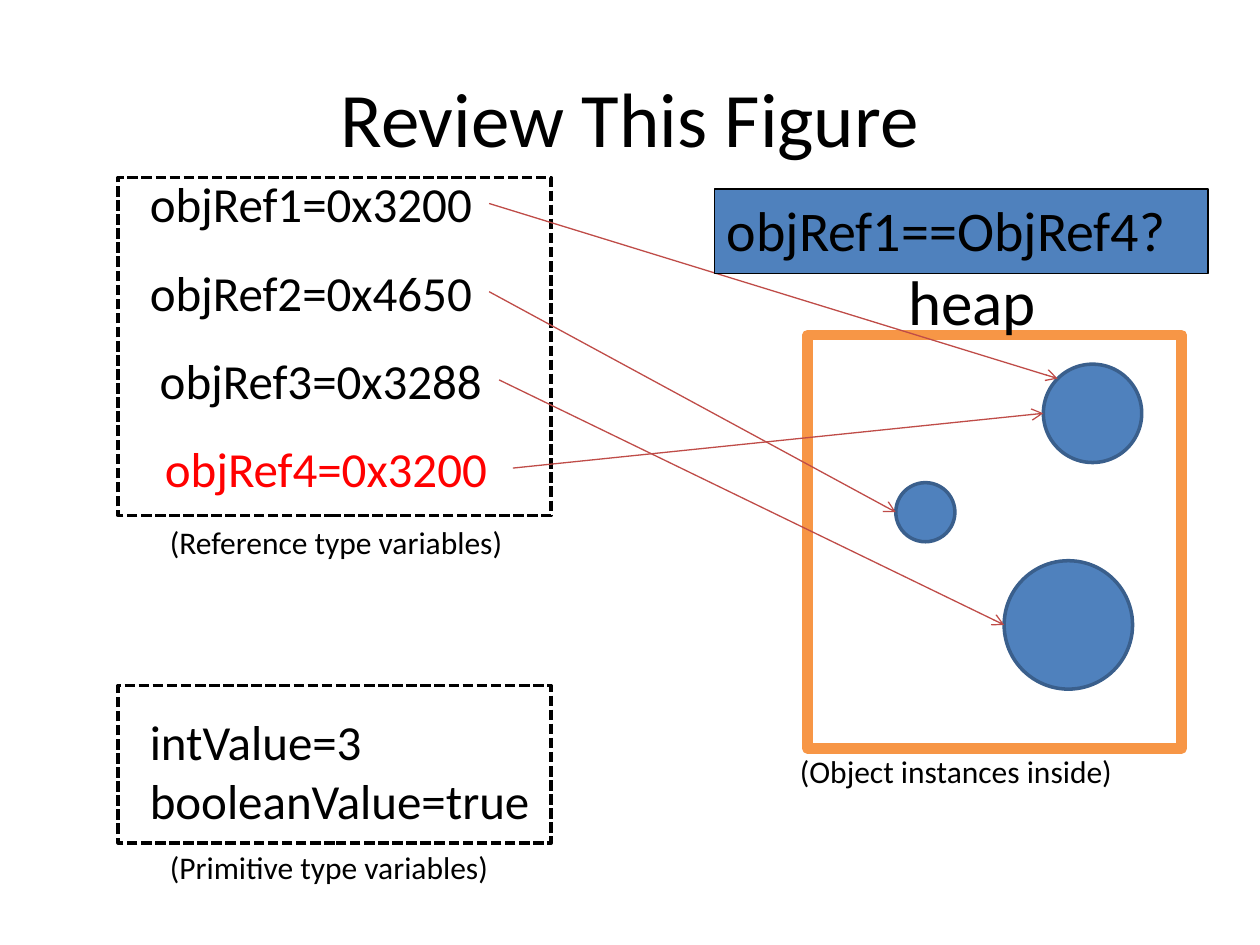
from math import sqrt
from pptx import Presentation
from pptx.dml.color import RGBColor
from pptx.enum.dml import MSO_LINE
from pptx.enum.shapes import MSO_CONNECTOR, MSO_SHAPE
from pptx.enum.text import MSO_ANCHOR, MSO_AUTO_SIZE, PP_ALIGN
from pptx.oxml.ns import qn
from pptx.util import Pt
from lxml.etree import SubElement

HUES = {
    "black": "000000", "white": "FFFFFF", "red": "FF0000", "blue": "4F81BD",
    "navy": "3A5F8C", "orange": "F79646", "brick": "BF4C48",
}


def hue(name):
    return RGBColor.from_string(HUES[name])


def add_run(frame, text, size, color="black"):
    run = frame.paragraphs[0].add_run()
    run.text = text
    run.font.name = "Calibri"
    run.font.size = Pt(size)
    run.font.color.rgb = hue(color)


def add_text(slide, text, x, y, w, h, size, color="black", wrap=False):
    box = slide.shapes.add_textbox(Pt(x), Pt(y), Pt(w), Pt(h))
    box.text_frame.word_wrap = wrap
    box.text_frame.auto_size = MSO_AUTO_SIZE.SHAPE_TO_FIT_TEXT
    add_run(box.text_frame, text, size, color)
    return box


def add_form(slide, kind, x, y, w, h, fill, edge, width):
    form = slide.shapes.add_shape(kind, Pt(x), Pt(y), Pt(w), Pt(h))
    form.shadow.inherit = False
    if fill:
        form.fill.solid()
        form.fill.fore_color.rgb = hue(fill)
    else:
        form.fill.background()
    form.line.color.rgb = hue(edge)
    form.line.width = Pt(width)
    return form


def add_frame(slide, y, h):
    frame = add_form(slide, MSO_SHAPE.RECTANGLE, 67.5, y, 247.5, h,
                     None, "black", 2)
    frame.line.dash_style = MSO_LINE.SQUARE_DOT


def add_arrow(slide, label, x, y):
    link = slide.shapes.add_connector(MSO_CONNECTOR.STRAIGHT, 0, 0, Pt(x), Pt(y))
    link.begin_connect(label, 3)
    link.line.color.rgb = hue("brick")
    link.line.width = Pt(0.75)
    SubElement(link.line._get_or_add_ln(), qn("a:tailEnd"), type="arrow")
    SubElement(link._element.spPr, qn("a:effectLst"))


def main():
    deck = Presentation()
    deck.slide_width, deck.slide_height = Pt(720), Pt(540)
    slide = deck.slides.add_slide(deck.slide_layouts[6])

    # Title
    title = add_text(slide, "Review This Figure", 36, 21.6, 648, 90, 44, wrap=True)
    title.text_frame.auto_size = MSO_AUTO_SIZE.NONE
    title.text_frame.vertical_anchor = MSO_ANCHOR.MIDDLE
    title.text_frame.paragraphs[0].alignment = PP_ALIGN.CENTER

    # Heap with its objects: left, top, diameter
    add_form(slide, MSO_SHAPE.RECTANGLE, 461.5, 191.5, 213.8, 236.2,
             "white", "orange", 6)
    add_text(slide, "heap", 512, 146.2, 101.5, 51, 36, wrap=True)
    discs = [(596.2, 208.1, 56.2), (511.9, 275.8, 33.8), (573.8, 320.4, 73.4)]
    for x, y, d in discs:
        add_form(slide, MSO_SHAPE.OVAL, x, y, d, d, "blue", "navy", 2)
    add_text(slide, "(Object instances inside)", 450, 426.2, 195, 29, 18)

    # Dashed frames with captions
    add_frame(slide, 101.5, 193)
    add_frame(slide, 391.7, 90)
    add_text(slide, "(Reference type variables)", 90, 295.2, 214, 29, 18)
    add_text(slide, "(Primitive type variables)", 90, 481, 199, 29, 18)

    # Primitive variables
    add_text(slide, "intValue=3", 78.5, 403.2, 137, 41, 28)
    add_text(slide, "booleanValue=true", 78.5, 437, 234, 41, 28)

    # Reference variables, each pointing at its object
    lefts = [(x, y + d / 2) for x, y, d in discs]
    x, y, d = discs[0]
    inset = d / 2 * (1 - 1 / sqrt(2))
    refs = [
        ("objRef1=0x3200", 78.5, 201, "black", (x + inset, y + inset)),
        ("objRef2=0x4650", 78.5, 201, "black", lefts[1]),
        ("objRef3=0x3288", 84.2, 201, "black", lefts[2]),
        ("objRef4=0x3200", 87.1, 206, "red", lefts[0]),
    ]
    for row, (text, left, wide, color, goal) in enumerate(refs):
        label = add_text(slide, text, left, 95.8 + 50.4 * row, wide, 41, 28, color)
        add_arrow(slide, label, *goal)

    # Question, above the arrows
    box = add_form(slide, MSO_SHAPE.RECTANGLE, 408.2, 108, 282.2, 48.2,
                   "blue", "black", 0.75)
    box.text_frame.vertical_anchor = MSO_ANCHOR.TOP
    box.text_frame.paragraphs[0].alignment = PP_ALIGN.LEFT
    add_run(box.text_frame, "objRef1==ObjRef4?", 32)

    deck.save("out.pptx")


if __name__ == "__main__":
    main()
